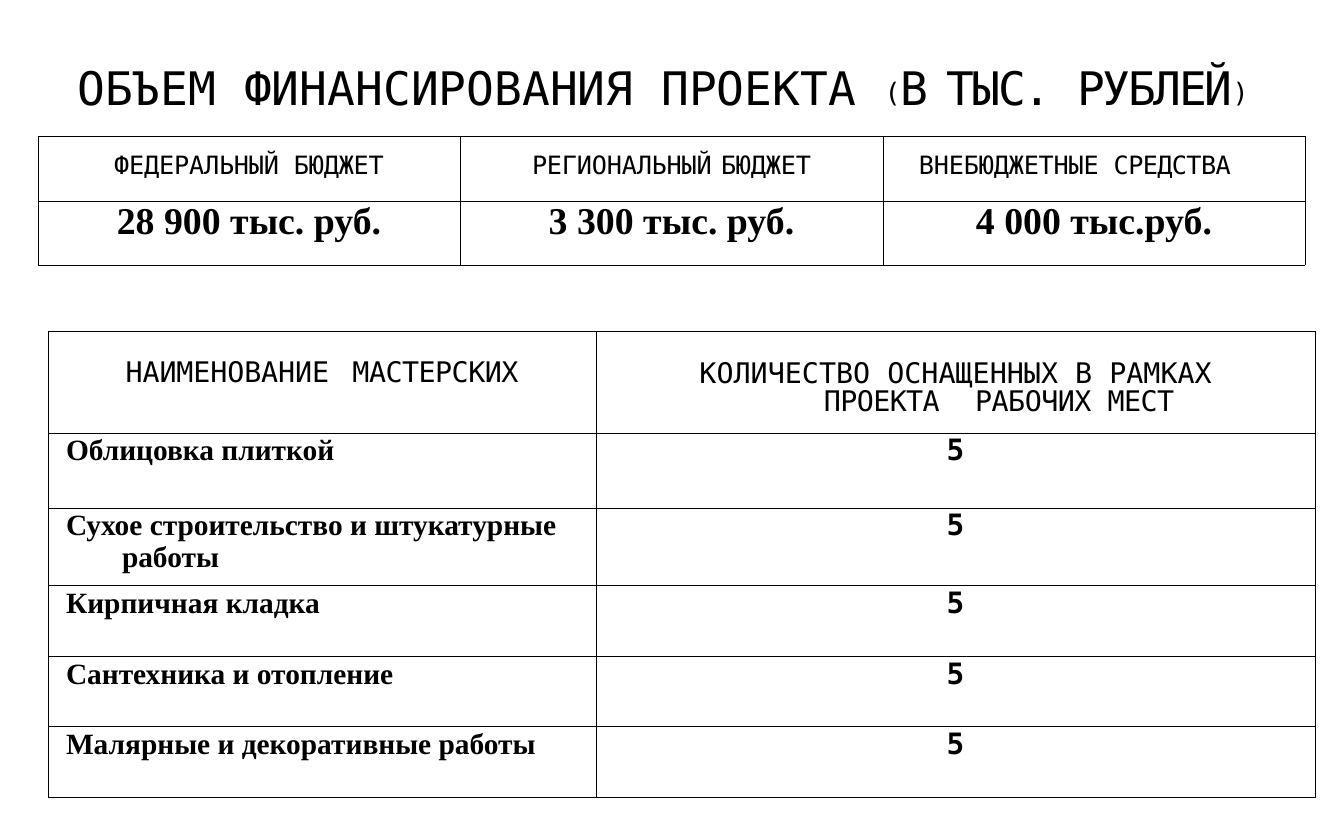
from lxml.etree import SubElement as add_element
from pptx import Presentation
from pptx.dml.color import RGBColor
from pptx.enum.text import MSO_ANCHOR as Anchor, PP_ALIGN as Align
from pptx.oxml.ns import qn
from pptx.util import Emu, Pt

EMU_PER_PX = 12095
MONO = "DejaVu Sans Mono"
SERIF = "Times New Roman"
BUDGETS = [
    ([("ФЕДЕРАЛЬНЫЙ БЮДЖЕТ", {"spc": -20})], {}, "28 900 тыс. руб."),
    ([("РЕГИОНАЛЬНЫЙ\tБЮДЖЕТ", {"spc": -20})], {"tab": 220}, "3 300 тыс. руб."),
    ([("ВНЕБЮДЖЕТНЫЕ ", {"spc": -20}), ("СРЕДСТВА", {"spc": -60})],
     {"align": Align.LEFT, "left": 36}, "4 000 тыс.руб."),
]
WORKSHOPS = [
    ("Облицовка плиткой", 5),
    ("Сухое строительство и штукатурные работы", 5),
    ("Кирпичная кладка", 5),
    ("Сантехника и отопление", 5),
    ("Малярные и декоративные работы", 5),
]


def px(length):
    return Emu(length * EMU_PER_PX)


def color(value):
    return RGBColor.from_string(value)


class FundingSlide:
    ink = "000000"
    paper = "FFFFFF"

    def __init__(self, presentation):
        self.slide = presentation.slides.add_slide(presentation.slide_layouts[6])
        self.slide.background.fill.solid()
        self.slide.background.fill.fore_color.rgb = color(self.paper)

    def fill_paragraph(self, paragraph, runs, size, name=MONO, bold=False,
                       align=Align.CENTER, left=0, first=0, right=0, tab=None, spacing=None):
        properties = paragraph._p.get_or_add_pPr()
        for key, value in {"marL": left, "indent": first, "marR": right}.items():
            properties.set(key, str(px(value)))
        if tab:
            tabs = add_element(properties, qn("a:tabLst"))
            add_element(tabs, qn("a:tab"), pos=str(px(tab)), algn="l")
        paragraph.alignment = align
        if spacing:
            paragraph.line_spacing = Pt(spacing)
        for text, attributes in runs:
            run = paragraph.add_run()
            run.text = text
            for key, value in {"size": Pt(size), "name": name, "bold": bold}.items():
                setattr(run.font, key, value)
            run.font.color.rgb = color(self.ink)
            for key, value in attributes.items():
                run._r.get_or_add_rPr().set(key, str(value))

    def text(self, box, runs, inset, **style):
        shape = self.slide.shapes.add_textbox(*map(px, box))
        frame = shape.text_frame
        margins = {"margin_left": 0, "margin_right": 0, "margin_bottom": 0}
        for key, value in {"word_wrap": True, "margin_top": px(inset), **margins}.items():
            setattr(frame, key, value)
        self.fill_paragraph(frame.paragraphs[0], runs, **style)

    def table(self, left, top, widths, heights):
        box = map(px, (left, top, sum(widths), sum(heights)))
        table = self.slide.shapes.add_table(len(heights), len(widths), *box).table
        table.first_row = table.horz_banding = False
        for column, width in zip(table.columns, widths):
            column.width = px(width)
        for row, height in zip(table.rows, heights):
            row.height = px(height)
        return table

    def cell(self, cell, runs, inset=0, anchor=Anchor.TOP, **style):
        margins = {"margin_left": 0, "margin_right": 0, "margin_bottom": 0}
        for key, value in {"margin_top": px(inset), "vertical_anchor": anchor, **margins}.items():
            setattr(cell, key, value)
        properties = cell._tc.get_or_add_tcPr()
        for side in ("lnL", "lnR", "lnT", "lnB"):
            line = add_element(properties, qn(f"a:{side}"), w=str(Pt(1)))
            fill = add_element(line, qn("a:solidFill"))
            add_element(fill, qn("a:srgbClr"), val=self.ink)
        cell.fill.background()
        self.fill_paragraph(cell.text_frame.paragraphs[0], runs, **style)


def main():
    presentation = Presentation()
    presentation.slide_width, presentation.slide_height = px(1344), px(840)
    funding = FundingSlide(presentation)

    bracket = {"baseline": 6000}
    title = [
        ("ОБЪЕМ ФИНАНСИРОВАНИЯ ПРОЕКТА ", {}), ("(", bracket), ("В\t", {}),
        ("ТЫС. ", {"spc": -210}), ("РУБЛЕЙ", {"spc": -220}), (")", bracket),
    ]
    funding.text((33, 36, 1260, 72), title, inset=6, size=44, tab=908, spacing=69)

    workshops = funding.table(48, 331, (548, 719), (102, 75, 78, 71, 70, 71))
    funding.cell(workshops.cell(0, 0),
                 [("НАИМЕНОВАНИЕ\t", {"spc": -10}), ("МАСТЕРСКИХ", {"spc": -50})],
                 inset=25, size=27, tab=254)
    funding.cell(workshops.cell(0, 1),
                 [("КОЛИЧЕСТВО ОСНАЩЕННЫХ В РАМКАХ ", {}),
                  ("ПРОЕКТА\t", {"spc": -60}), ("РАБОЧИХ МЕСТ", {"spc": -50})],
                 inset=16, anchor=Anchor.MIDDLE, size=27,
                 left=151, first=-87, right=64, tab=153, spacing=27)
    for row, (workshop, places) in enumerate(WORKSHOPS, 1):
        funding.cell(workshops.cell(row, 0), [(workshop, {})], inset=1, size=28,
                     name=SERIF, bold=True, align=Align.LEFT, left=74, first=-56)
        funding.cell(workshops.cell(row, 1), [(str(places), {})], size=28, bold=True)

    budgets = funding.table(38, 136, (422, 423, 422), (65, 64))
    for column, (heading, style, amount) in enumerate(BUDGETS):
        funding.cell(budgets.cell(0, column), heading, inset=15, size=24, **style)
        funding.cell(budgets.cell(1, column), [(amount, {})], size=36, name=SERIF, bold=True)

    presentation.save("out.pptx")


if __name__ == "__main__":
    main()
